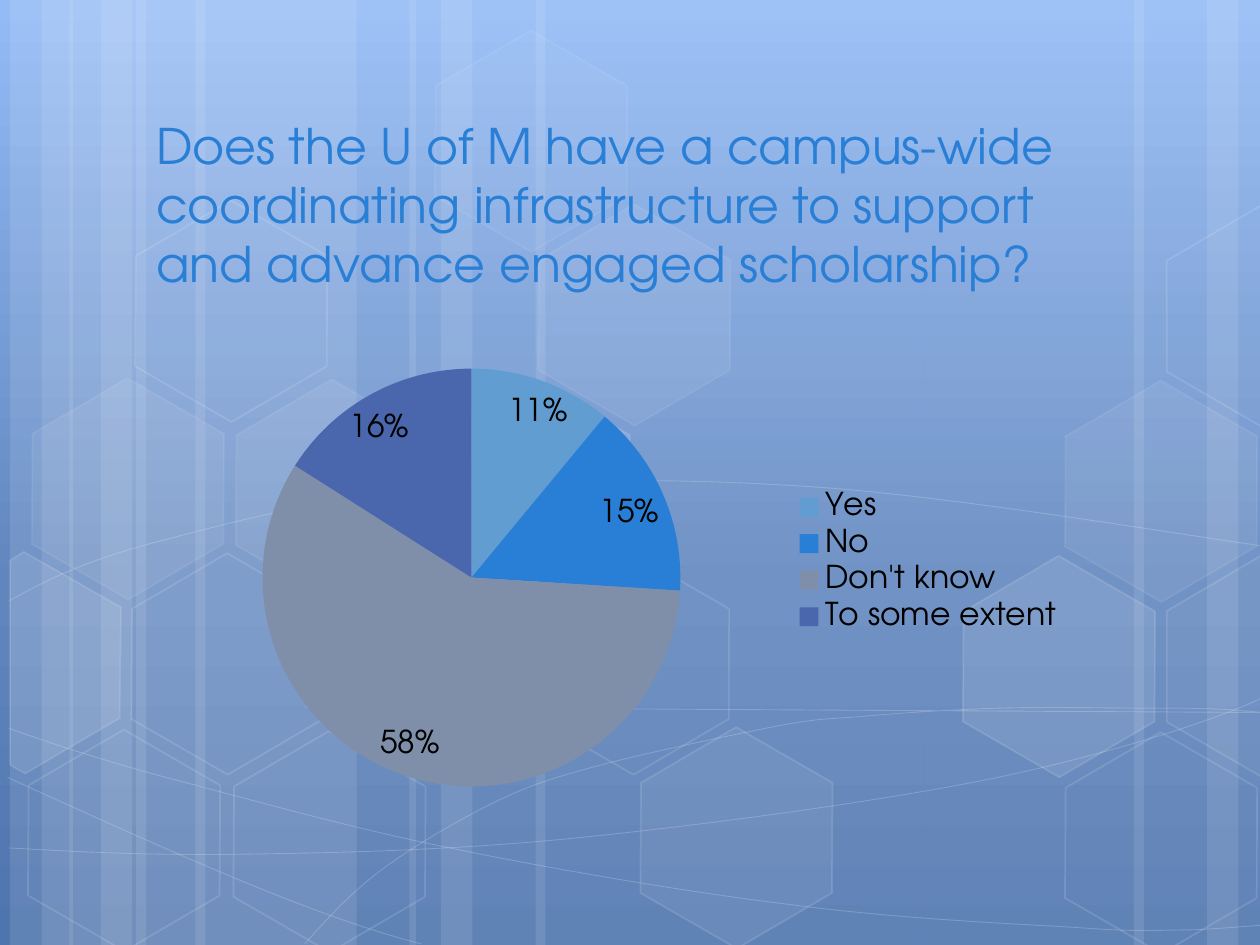
from copy import deepcopy
from typing import NamedTuple, Optional

from lxml.etree import SubElement
from pptx import Presentation
from pptx.chart.data import CategoryChartData
from pptx.dml.color import RGBColor
from pptx.enum.chart import XL_CHART_TYPE, XL_LABEL_POSITION, XL_LEGEND_POSITION
from pptx.enum.shapes import MSO_SHAPE
from pptx.enum.text import MSO_ANCHOR, MSO_AUTO_SIZE
from pptx.oxml.ns import qn
from pptx.util import Inches, Pt

FONT = "TeX Gyre Adventor"
COLORS = {"white": "FFFFFF", "title": "297FD5", "text": "000000"}
BACKGROUND_STOPS = [(0, "93BBF6"), (0.62, "6186BE"), (1, "4F75AE")]
HEXAGON_WIDTH, HEXAGON_HEIGHT = 1.75, 1.52


class Band(NamedTuple):
    left: float
    width: float


class Hexagon(NamedTuple):
    left: float
    top: float
    fill_opacity: Optional[int] = None
    line_opacity: int = 12


class CutHexagon(NamedTuple):
    points: list
    fill_opacity: Optional[int] = None


class Answer(NamedTuple):
    label: str
    share: float
    color: str


BANDS = [
    Band(1.08, 1.75), Band(0.08, 0.5), Band(0.33, 0.83),
    Band(1.55, 1.75), Band(0.55, 0.5), Band(0.8, 0.83),
    Band(7.33, 1.75), Band(9.58, 0.5), Band(9, 0.83),
    Band(4.25, 3.08), Band(3.25, 0.5), Band(3.5, 0.83),
]
# Each curve is a start point followed by two control points and an end point per segment.
CURVES = [
    [(0.07, 6.73), (0.61, 6.76), (1.15, 6.79), (1.9, 6.78), (2.65, 6.77), (3.58, 6.75),
     (4.58, 6.65), (5.58, 6.55), (7, 6.36), (7.92, 6.17), (8.83, 5.98), (9.77, 5.68),
     (10.07, 5.51)],
    [(0.07, 4.77), (0.36, 4.61), (0.65, 4.46), (1.21, 4.31), (1.78, 4.16), (2.59, 3.94),
     (3.47, 3.87), (4.36, 3.8), (5.44, 3.79), (6.54, 3.87), (7.64, 3.95), (9.47, 4.26),
     (10.07, 4.34)],
    [(0.06, 6.17), (1.27, 6.72), (2.47, 7.27), (3.34, 7.49)],
    [(0.07, 5.78), (0.38, 5.89), (0.7, 6), (1.28, 6.16), (1.86, 6.31), (2.73, 6.56),
     (3.57, 6.73), (4.4, 6.9), (5.45, 7.08), (6.28, 7.18), (7.11, 7.29), (8, 7.33),
     (8.53, 7.36), (9.05, 7.4), (9.19, 7.38), (9.45, 7.38), (9.71, 7.37), (9.89, 7.35),
     (10.07, 7.34)],
    [(2.42, 7.49), (2.6, 7.29), (2.78, 7.09), (3.02, 6.91), (3.26, 6.73), (3.6, 6.53),
     (3.88, 6.39), (4.16, 6.25), (4.33, 6.19), (4.7, 6.09), (5.06, 5.99), (5.73, 5.85),
     (6.08, 5.78), (6.44, 5.71), (6.49, 5.71), (6.8, 5.69), (7.11, 5.66), (7.6, 5.63),
     (7.94, 5.62), (8.29, 5.61), (8.86, 5.62), (8.86, 5.62), (9.08, 5.62), (9.31, 5.62),
     (9.53, 5.62), (9.71, 5.63), (9.88, 5.64), (9.97, 5.65), (10.06, 5.66), (10.03, 5.65),
     (10.06, 5.66)],
]
# The straight stretch of the last curve is a single segment with its controls on the line.
CURVES[-1][21:22] = []
HEXAGONS = [
    Hexagon(3.36, 3.13, 10), Hexagon(4.15, 4.51), Hexagon(4.16, 1.74, 7, 8),
    Hexagon(3.34, 0.36, 4, 8), Hexagon(4.97, 5.89, 6), Hexagon(0.11, 5.91),
    Hexagon(0.14, 3.12, 7, 8), Hexagon(0.93, 4.51), Hexagon(1.74, 5.92),
    Hexagon(1.76, 3.13, 7, 8), Hexagon(0.96, 1.71), Hexagon(7.53, 4.53, 10),
    Hexagon(8.34, 5.93), Hexagon(8.34, 3.14, 7, 8),
]
CUT_HEXAGONS = [
    CutHexagon([(0.08, 4.45), (0.19, 4.38), (0.96, 4.82), (0.95, 5.7), (0.2, 6.14),
                (0.08, 6.07)], 10),
    CutHexagon([(9.26, 4.85), (10.01, 4.41), (10.09, 4.46), (10.09, 6.13), (10.02, 6.17),
                (9.26, 5.73)], 4),
    CutHexagon([(9.26, 2.07), (10.01, 1.63), (10.1, 1.68), (10.09, 3.35), (10.02, 3.39),
                (9.26, 2.95)]),
]
ANSWERS = [
    Answer("Yes", 0.11, "629DD1"), Answer("No", 0.15, "297FD5"),
    Answer("Don't know", 0.58, "7F8FA9"), Answer("To some extent", 0.16, "4A66AC"),
]


def paint_white(fill, opacity: int) -> None:
    """Make a shape or line fill translucent white; opacity is a percentage."""
    fill.solid()
    fill.fore_color.rgb = RGBColor.from_string(COLORS["white"])
    color = fill._xPr.find(qn("a:solidFill"))[0]
    SubElement(color, qn("a:alpha")).set("val", str(opacity * 1000))


def style_shape(shape, fill_opacity: Optional[int] = None,
                line_opacity: Optional[int] = None, line_width: float = 1) -> None:
    shape.shadow.inherit = False
    if fill_opacity is None:
        shape.fill.background()
    else:
        paint_white(shape.fill, fill_opacity)
    if line_opacity is None:
        shape.line.fill.background()
    else:
        shape.line.width = Pt(line_width)
        paint_white(shape.line.fill, line_opacity)


def set_background(slide) -> None:
    fill = slide.background.fill
    fill.gradient()
    fill.gradient_angle = 270
    stop_list = slide.element.find(".//" + qn("a:gsLst"))
    stop_list.append(deepcopy(stop_list[-1]))
    for stop, (position, color) in zip(fill.gradient_stops, BACKGROUND_STOPS):
        stop.position = position
        stop.color.rgb = RGBColor.from_string(color)


def add_outline(slide, points: list, close: bool):
    start, *rest = [(Inches(x), Inches(y)) for x, y in points]
    builder = slide.shapes.build_freeform(*start)
    builder.add_line_segments(rest, close=close)
    return builder.convert_to_shape()


def add_curve(slide, points: list) -> None:
    """Draw an open outline and turn each three of its lines into one cubic Bézier segment."""
    shape = add_outline(slide, points, close=False)
    outline = shape._element.find(".//" + qn("a:path"))
    lines = outline.findall(qn("a:lnTo"))
    for first in range(0, len(lines), 3):
        segment = SubElement(outline, qn("a:cubicBezTo"))
        for line in lines[first:first + 3]:
            segment.append(line[0])
            outline.remove(line)
    style_shape(shape, line_opacity=20, line_width=0.5)


def add_hexagon(slide, hexagon: Hexagon) -> None:
    shape = slide.shapes.add_shape(MSO_SHAPE.HEXAGON, Inches(hexagon.left), Inches(hexagon.top),
                                   Inches(HEXAGON_WIDTH), Inches(HEXAGON_HEIGHT))
    shape.adjustments[0] = 0.285
    shape.rotation = 30
    style_shape(shape, hexagon.fill_opacity, hexagon.line_opacity)


def add_text(slide, text: str, *, left: float, top: float, width: float, height: float,
             size: float, color: str, anchor=MSO_ANCHOR.TOP) -> None:
    box = slide.shapes.add_textbox(Inches(left), Inches(top), Inches(width), Inches(height))
    frame = box.text_frame
    frame.word_wrap = True
    frame.auto_size = MSO_AUTO_SIZE.NONE
    frame.vertical_anchor = anchor
    run = frame.paragraphs[0].add_run()
    run.text = text
    run.font.name, run.font.size = FONT, Pt(size)
    run.font.color.rgb = RGBColor.from_string(color)


def add_answer_chart(slide) -> None:
    data = CategoryChartData(number_format="0%")
    data.categories = [answer.label for answer in ANSWERS]
    data.add_series("Series 1", [answer.share for answer in ANSWERS])
    chart = slide.shapes.add_chart(XL_CHART_TYPE.PIE, Inches(1.14), Inches(2.54),
                                   Inches(7.41), Inches(3.84), data).chart
    chart.has_title = False
    chart.font.name, chart.font.size = FONT, Pt(18)
    chart.font.color.rgb = RGBColor.from_string(COLORS["text"])
    chart.has_legend = True
    chart.legend.position = XL_LEGEND_POSITION.RIGHT
    chart.legend.include_in_layout = False
    plot = chart.plots[0]
    plot.vary_by_categories = True
    plot.has_data_labels = True
    labels = plot.data_labels
    labels.show_value = True
    labels.number_format, labels.number_format_is_linked = "0%", False
    labels.position = XL_LABEL_POSITION.BEST_FIT
    for index, answer in enumerate(ANSWERS):
        fill = plot.series[0].points[index].format.fill
        fill.solid()
        fill.fore_color.rgb = RGBColor.from_string(answer.color)


def main() -> None:
    presentation = Presentation()
    presentation.slide_width, presentation.slide_height = Inches(10), Inches(7.5)
    slide = presentation.slides.add_slide(presentation.slide_layouts[6])
    set_background(slide)
    for band in BANDS:
        shape = slide.shapes.add_shape(MSO_SHAPE.RECTANGLE, Inches(band.left), 0,
                                       Inches(band.width), presentation.slide_height)
        style_shape(shape, fill_opacity=10)
    for curve in CURVES:
        add_curve(slide, curve)
    for hexagon in HEXAGONS:
        add_hexagon(slide, hexagon)
    for cut in CUT_HEXAGONS:
        style_shape(add_outline(slide, cut.points, close=True), cut.fill_opacity, 12)
    add_text(slide, "Does the U of M have a campus-wide coordinating infrastructure to support "
             "and advance engaged scholarship?", left=1.14, top=1.12, width=7.68, height=1.25,
             size=28, color=COLORS["title"], anchor=MSO_ANCHOR.BOTTOM)
    add_answer_chart(slide)
    presentation.save("out.pptx")


if __name__ == "__main__":
    main()
